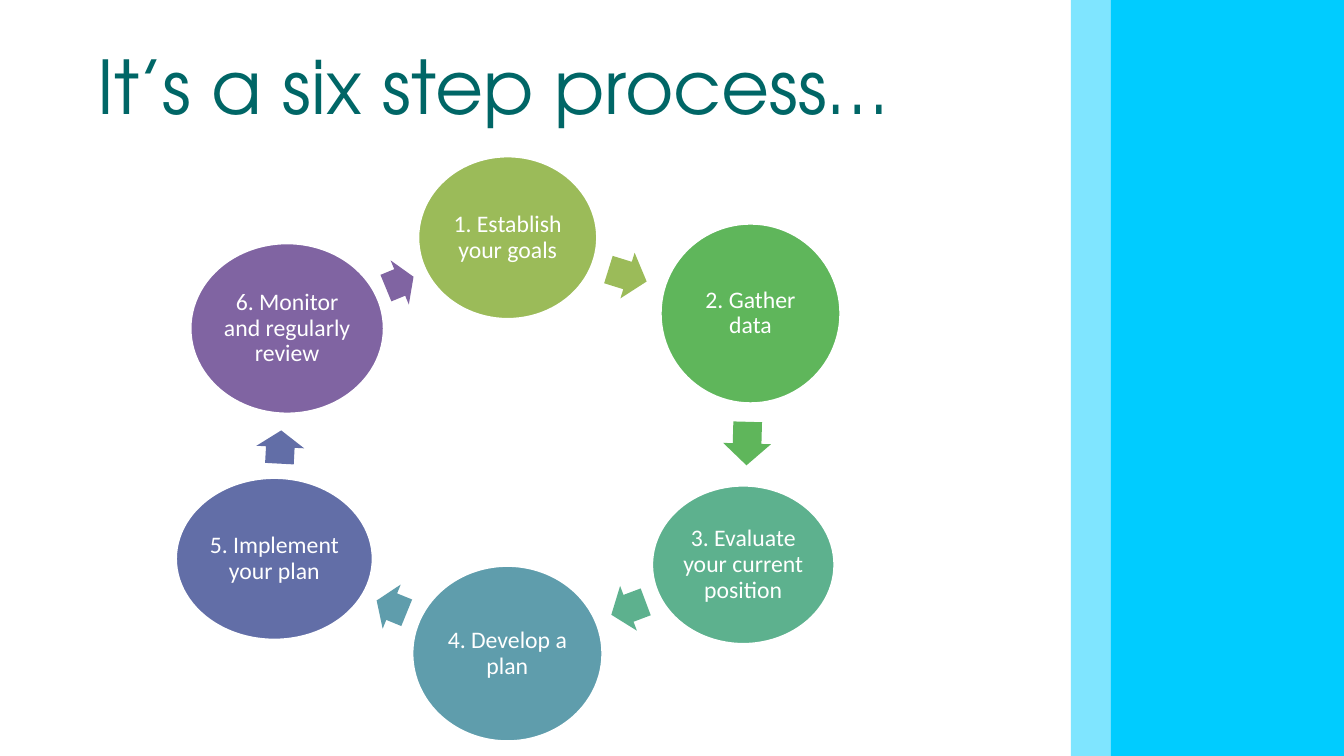
from dataclasses import dataclass

from lxml.etree import SubElement
from pptx import Presentation
from pptx.dml.color import RGBColor
from pptx.enum.shapes import MSO_SHAPE as Preset
from pptx.enum.text import MSO_ANCHOR as Anchor, MSO_AUTO_SIZE as AutoSize, PP_ALIGN as Align
from pptx.oxml.ns import qn
from pptx.shapes.autoshape import Shape
from pptx.slide import Slide
from pptx.text.text import TextFrame
from pptx.util import Pt

WHITE = RGBColor(0xFF, 0xFF, 0xFF)
TEAL = RGBColor(0x00, 0x66, 0x66)
CYAN = RGBColor(0x00, 0xCC, 0xFF)
OLIVE = RGBColor(0x9B, 0xBB, 0x59)
GREEN = RGBColor(0x5F, 0xB6, 0x5B)
SEA = RGBColor(0x5D, 0xB1, 0x8E)
STEEL = RGBColor(0x5F, 0x9D, 0xAC)
INDIGO = RGBColor(0x62, 0x6E, 0xA7)
PURPLE = RGBColor(0x80, 0x64, 0xA2)

PAGE_WIDTH, PAGE_HEIGHT = 1134, 638
BAND_LEFT, PANEL_LEFT = 903.6, 937.4
ARROW_HEIGHT = 40.3


@dataclass(frozen=True)
class Frame:
    left: float
    top: float
    width: float
    height: float


@dataclass(frozen=True)
class Step:
    label: str
    color: RGBColor
    circle: Frame
    arrow: Frame
    angle: float


STEPS = [
    Step("1. Establish your goals", OLIVE, Frame(352.8, 131.8, 151.2, 137.5),
         Frame(512.6, 212.4, 33.8, ARROW_HEIGHT), 17.3),
    Step("2. Gather data", GREEN, Frame(557.3, 188.6, 151.9, 151.9),
         Frame(612, 354.2, 36.7, ARROW_HEIGHT), 91.6),
    Step("3. Evaluate your current position", SEA, Frame(550.1, 409.7, 154.1, 133.9),
         Frame(514.8, 493.2, 31, ARROW_HEIGHT), 159.4),
    Step("4. Develop a plan", STEEL, Frame(347.8, 477.4, 160.6, 148.3),
         Frame(316.8, 491.8, 27.4, ARROW_HEIGHT), 202.2),
    Step("5. Implement your plan", INDIGO, Frame(148.3, 403.2, 166.3, 136.8),
         Frame(222.5, 357.1, 28.1, ARROW_HEIGHT), 273.1),
    Step("6. Monitor and regularly review", PURPLE, Frame(160.6, 205.2, 163.4, 144),
         Frame(324.7, 218.2, 25.2, ARROW_HEIGHT), 337.6),
]


def add_filled(page: Slide, preset: Preset, frame: Frame, color: RGBColor) -> Shape:
    shape = page.shapes.add_shape(preset, Pt(frame.left), Pt(frame.top),
                                  Pt(frame.width), Pt(frame.height))
    shape.shadow.inherit = False
    shape.fill.solid()
    shape.fill.fore_color.rgb = color
    shape.line.fill.background()
    return shape


def write_text(frame: TextFrame, text: str, font: str, size: float, color: RGBColor,
               align: Align, inset_x: float, inset_y: float) -> None:
    frame.word_wrap = True
    frame.auto_size = AutoSize.NONE
    frame.vertical_anchor = Anchor.MIDDLE
    frame.margin_left = frame.margin_right = Pt(inset_x)
    frame.margin_top = frame.margin_bottom = Pt(inset_y)
    para = frame.paragraphs[0]
    para.alignment = align
    span = para.add_run()
    span.text = text
    span.font.name = font
    span.font.size = Pt(size)
    span.font.color.rgb = color


def add_side_panel(page: Slide) -> None:
    add_filled(page, Preset.RECTANGLE,
               Frame(PANEL_LEFT, 0, PAGE_WIDTH - PANEL_LEFT, PAGE_HEIGHT), CYAN)
    band = add_filled(page, Preset.RECTANGLE,
                      Frame(BAND_LEFT, 0, PANEL_LEFT - BAND_LEFT, PAGE_HEIGHT), CYAN)
    tint = next(band.element.spPr.iter(qn("a:srgbClr")))
    SubElement(tint, qn("a:alpha"), val="50000")


def add_title(page: Slide, text: str) -> None:
    title = page.shapes.title
    title.left, title.top = Pt(79.2), Pt(18.7)
    title.width, title.height = Pt(1021), Pt(106.6)
    write_text(title.text_frame, text, "TeX Gyre Adventor", 62.5, TEAL, Align.LEFT, 2.9, 1.4)


def add_step(page: Slide, step: Step) -> None:
    circle = add_filled(page, Preset.OVAL, step.circle, step.color)
    circle.line.color.rgb = WHITE
    circle.line.width = Pt(2)
    write_text(circle.text_frame, step.label, "Calibri", 20, WHITE, Align.CENTER, 2, 2)
    circle.text_frame.paragraphs[0].line_spacing = 0.9
    arrow = add_filled(page, Preset.RIGHT_ARROW, step.arrow, step.color)
    arrow.adjustments[0] = 0.6
    arrow.adjustments[1] = 0.5
    arrow.rotation = step.angle


def main() -> None:
    deck = Presentation()
    deck.slide_width, deck.slide_height = Pt(PAGE_WIDTH), Pt(PAGE_HEIGHT)
    page = deck.slides.add_slide(deck.slide_layouts[5])
    add_side_panel(page)
    add_title(page, "It’s a six step process…")
    for step in STEPS:
        add_step(page, step)
    deck.save("out.pptx")


if __name__ == "__main__":
    main()
